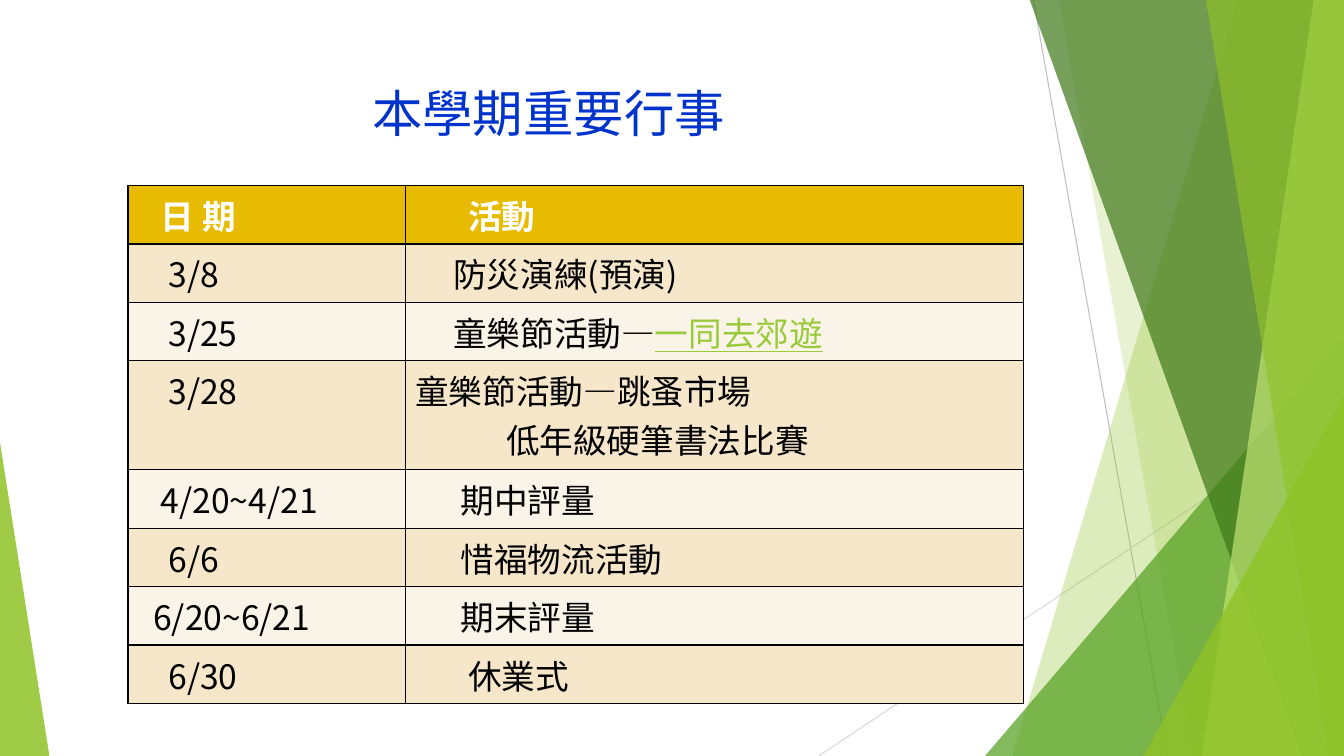
from lxml.etree import SubElement as Sub
from pptx import Presentation
from pptx.dml.color import RGBColor
from pptx.enum.shapes import MSO_CONNECTOR as Link, MSO_SHAPE as Kind
from pptx.enum.text import MSO_ANCHOR as Anchor, PP_ALIGN as Align
from pptx.oxml.ns import qn
from pptx.util import Inches, Pt

FONT = "Noto Sans CJK SC"
WHITE = RGBColor(0xFF, 0xFF, 0xFF)
BLACK = RGBColor(0, 0, 0)
BLUE = RGBColor(0x00, 0x33, 0xCC)
GRAY = RGBColor(0xBF, 0xBF, 0xBF)
SILVER = RGBColor(0xD9, 0xD9, 0xD9)
LIME = RGBColor(0x90, 0xC2, 0x26)
GREEN = RGBColor(0x54, 0xA0, 0x21)
FOREST = RGBColor(0x3F, 0x78, 0x19)
PALE = RGBColor(0xC0, 0xE4, 0x74)
LEAF = RGBColor(0x99, 0xCA, 0x3C)
GOLD = RGBColor(0xE7, 0xBB, 0x01)
SAND = RGBColor(0xF6, 0xE7, 0xCB)
CREAM = RGBColor(0xFA, 0xF3, 0xE7)

WIDE, HIGH, TOP = 13.33, 7.5, -0.01
STEP = 0.075
ROW, TALL = 0.58, 1.08

LINES = [
    ((10.25, 0), (11.58, HIGH), GRAY),
    ((WIDE, 4.03), (8.12, HIGH), SILVER),
]
BACK = [
    (12.28, 10.04, LIME, 30),
    (10.5, 11.83, LIME, 20),
]
FRONT = [
    (10.21, 12.91, FOREST, 70),
    (13.03, 11.92, PALE, 70),
    (11.96, 13.18, LIME, 65),
]
EVENTS = [
    (3, "日 期", [(7, "活動", "")]),
    (4, "3/8", [(5, "防災演練(預演)", "")]),
    (4, "3/25", [(5, "童樂節活動—", "一同去郊遊")]),
    (4, "3/28", [(0, "童樂節活動—跳蚤市場", ""), (12, "低年級硬筆書法比賽", "")]),
    (3, "4/20~4/21", [(6, "期中評量", "")]),
    (4, "6/6", [(6, "惜福物流活動", "")]),
    (2, "6/20~6/21", [(6, "期末評量", "")]),
    (4, "6/30", [(7, "休業式", "")]),
]


def add_line(slide, start, end, color):
    ends = [Inches(n) for n in (*start, *end)]
    line = slide.shapes.add_connector(Link.STRAIGHT, *ends)
    line.line.color.rgb = color
    line.line.width = Pt(0.75)
    Sub(line._element.spPr, qn("a:effectLst"))


def tint(shape, color, alpha):
    shape.shadow.inherit = False
    shape.line.fill.background()
    shape.fill.solid()
    shape.fill.fore_color.rgb = color
    tone = shape._element.spPr.find(".//" + qn("a:srgbClr"))
    Sub(tone, qn("a:alpha"), val=str(alpha * 1000))


def add_band(slide, top, base, color, alpha):
    pen = slide.shapes.build_freeform(Inches(top), Inches(TOP))
    spots = [(WIDE, TOP), (WIDE, HIGH), (base, HIGH)]
    pen.add_line_segments([(Inches(x), Inches(y)) for x, y in spots])
    tint(pen.convert_to_shape(), color, alpha)


def add_wedge(slide, box, peak, color, alpha):
    wedge = slide.shapes.add_shape(Kind.ISOSCELES_TRIANGLE, *map(Inches, box))
    wedge.adjustments[0] = peak
    tint(wedge, color, alpha)


def add_run(para, text, color, **form):
    run = para.add_run()
    run.text = text
    run.font.color.rgb = color
    for name, value in ({"name": FONT, "size": Pt(24), "bold": False} | form).items():
        setattr(run.font, name, value)
    Sub(run._r.get_or_add_rPr(), qn("a:ea"), typeface=FONT)


def add_title(slide, text):
    box = slide.shapes.add_textbox(*map(Inches, (0.74, 0.77, 9.4, 1.07)))
    frame = box.text_frame
    for name, value in {"word_wrap": True, "vertical_anchor": Anchor.TOP}.items():
        setattr(frame, name, value)
    para = frame.paragraphs[0]
    para.alignment = Align.CENTER
    add_run(para, text, BLUE, size=Pt(36))


def fill_cell(cell, lines, color, fill, bold):
    props = cell._tc.get_or_add_tcPr()
    for side in ("lnL", "lnR", "lnT", "lnB"):
        edge = Sub(props, qn("a:" + side), w=str(Pt(1)))
        Sub(Sub(edge, qn("a:solidFill")), qn("a:srgbClr"), val=str(BLACK))
    cell.fill.solid()
    cell.fill.fore_color.rgb = fill
    frame = cell.text_frame
    for i, (indent, text, link) in enumerate(lines):
        para = frame.add_paragraph() if i else frame.paragraphs[0]
        para._p.get_or_add_pPr().set("marL", str(Inches(indent * STEP)))
        add_run(para, text, color, bold=bold)
        if link:
            add_run(para, link, LEAF, underline=True)


def add_events(slide):
    highs = [TALL if len(lines) > 1 else ROW for _, _, lines in EVENTS]
    box = map(Inches, (1.27, 1.84, 8.88, sum(highs)))
    table = slide.shapes.add_table(len(EVENTS), 2, *box).table
    for col, width in zip(table.columns, (2.75, 6.13)):
        col.width = Inches(width)
    for i, (indent, date, lines) in enumerate(EVENTS):
        table.rows[i].height = Inches(highs[i])
        fill = (SAND if i % 2 else CREAM) if i else GOLD
        color = BLACK if i else WHITE
        for j, part in enumerate(([(indent, date, "")], lines)):
            fill_cell(table.cell(i, j), part, color, fill, i == 0)


def main():
    deck = Presentation()
    deck.slide_width, deck.slide_height = Inches(WIDE), Inches(HIGH)
    slide = deck.slides.add_slide(deck.slide_layouts[6])
    for line in LINES:
        add_line(slide, *line)
    for band in BACK:
        add_band(slide, *band)
    add_wedge(slide, (9.77, 3.33, 3.56, 4.17), 1, GREEN, 72)
    for band in FRONT:
        add_band(slide, *band)
    add_wedge(slide, (11.34, 3.93, 1.99, 3.57), 1, LIME, 80)
    add_wedge(slide, (0, 4.39, 0.49, 3.11), 0, LIME, 85)
    add_title(slide, "本學期重要行事")
    add_events(slide)
    deck.save("out.pptx")


if __name__ == "__main__":
    main()
